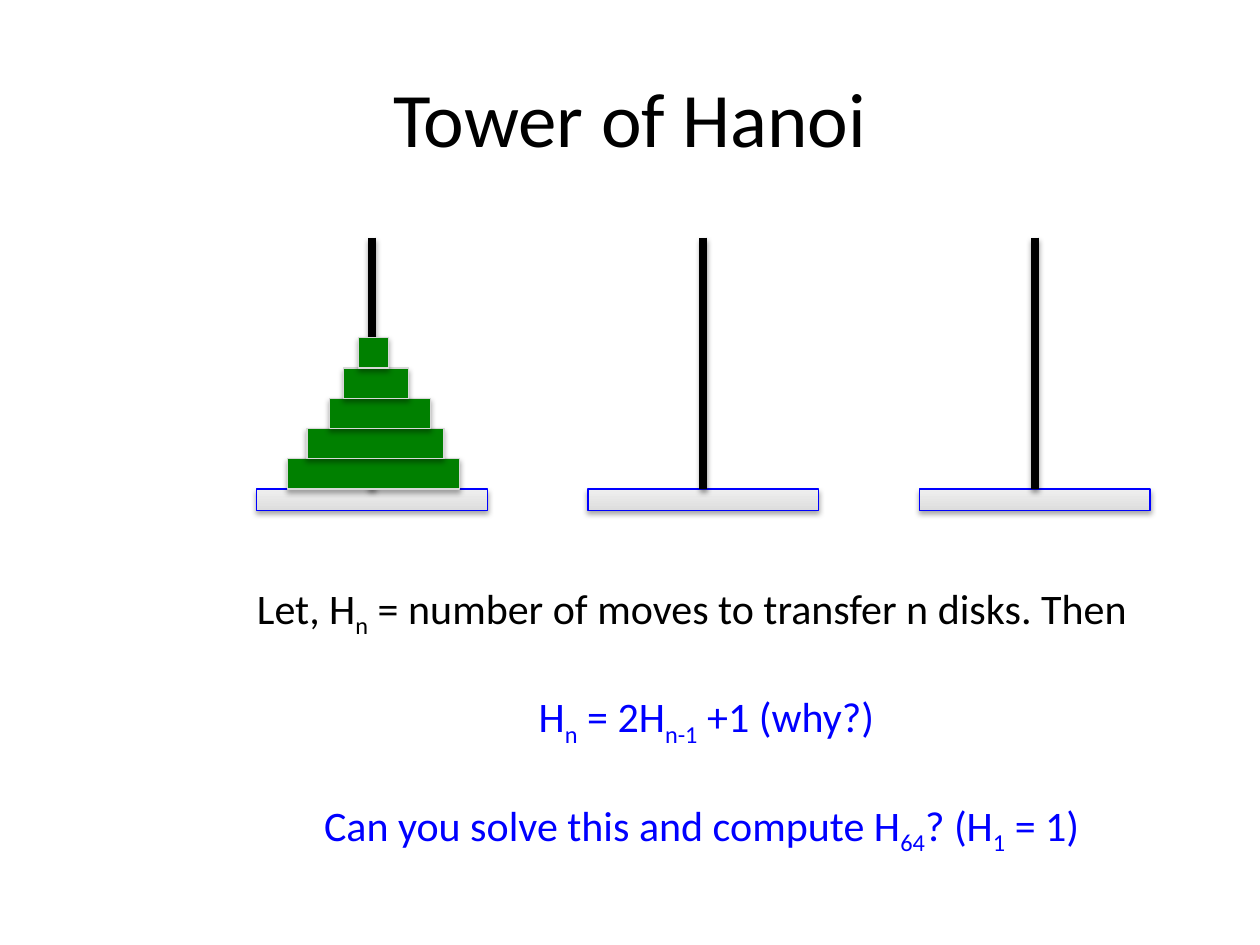
from pptx import Presentation
from pptx.dml.color import RGBColor
from pptx.enum.shapes import MSO_CONNECTOR, MSO_SHAPE
from pptx.enum.text import MSO_ANCHOR, PP_ALIGN
from pptx.oxml import parse_xml
from pptx.oxml.ns import nsdecls
from pptx.util import Cm, Pt

BLACK = RGBColor(0, 0, 0)
BLUE = RGBColor(0, 0, 255)
GREEN = RGBColor(0, 128, 0)
DISK_EDGE = RGBColor(0xD8, 0xD8, 0xD8)
BASE_DARK = RGBColor(0xDD, 0xDD, 0xDD)
BASE_LIGHT = RGBColor(0xEF, 0xEF, 0xEF)
FONT = "Calibri"

TITLE = "Tower of Hanoi"
# Each line: alignment, colour, then pieces that alternate normal and subscript
LINES = [
    (PP_ALIGN.LEFT, BLACK, ["Let, H", "n", " = number of moves to transfer n disks. Then"]),
    (PP_ALIGN.CENTER, BLUE, ["H", "n", " = 2H", "n-1", " +1 (why?)"]),
    (PP_ALIGN.CENTER, BLUE, ["Can you solve this and compute H", "64", "? (H", "1", " = 1) "]),
]

# All lengths in centimetres
PEG_COUNT, FIRST_PEG, PEG_PITCH = 3, 7.5, 6.68
PEG_TOP, BASE_TOP = 4.79, 9.86
BASE_WIDTH, BASE_HEIGHT = 4.65, 0.43
DISK_OFFSETS = [0.03, 0.07, 0.16, 0.08, 0.03]  # off the peg, bottom disk first
DISK_WIDTH, DISK_SHRINK, DISK_HEIGHT = 3.48, 0.72, 0.61


def add_shadow(part, distance, opacity):
    """Drop shadow straight down; call after fill and line are set."""
    part._element.spPr.append(parse_xml(
        f'<a:effectLst {nsdecls("a")}>'
        f'<a:outerShdw blurRad="{Pt(3.1)}" dist="{Pt(distance)}" dir="5400000" rotWithShape="0">'
        f'<a:srgbClr val="000000"><a:alpha val="{opacity * 1000}"/></a:srgbClr>'
        '</a:outerShdw></a:effectLst>'))


def add_slab(slide, center, top, width, height, edge):
    slab = slide.shapes.add_shape(
        MSO_SHAPE.RECTANGLE, Cm(center - width / 2), Cm(top), Cm(width), Cm(height))
    slab.line.color.rgb = edge
    slab.line.width = Pt(0.75)
    return slab


def add_base(slide, center):
    base = add_slab(slide, center, BASE_TOP, BASE_WIDTH, BASE_HEIGHT, BLUE)
    base.fill.gradient()
    base.fill.gradient_angle = 90
    for stop, color in zip(base.fill.gradient_stops, (BASE_DARK, BASE_LIGHT)):
        stop.color.rgb = color
    add_shadow(base, 1.8, 35)
    return base


def add_peg(slide, center, base):
    peg = slide.shapes.add_connector(
        MSO_CONNECTOR.STRAIGHT, Cm(center), Cm(PEG_TOP), Cm(center), Cm(BASE_TOP))
    peg.end_connect(base, 0)
    peg.line.color.rgb = BLACK
    peg.line.width = Pt(4.5)
    add_shadow(peg, 1.6, 38)


def add_disk(slide, level, offset):
    disk = add_slab(slide, FIRST_PEG + offset, BASE_TOP - (level + 1) * DISK_HEIGHT,
                    DISK_WIDTH - level * DISK_SHRINK, DISK_HEIGHT, DISK_EDGE)
    disk.fill.solid()
    disk.fill.fore_color.rgb = GREEN
    add_shadow(disk, 1.8, 35)


def add_text_frame(slide, left, top, width, height):
    frame = slide.shapes.add_textbox(Cm(left), Cm(top), Cm(width), Cm(height)).text_frame
    frame.word_wrap = True
    return frame


def style(paragraph, size, color, alignment):
    paragraph.font.name = FONT
    paragraph.font.size = Pt(size)
    paragraph.font.color.rgb = color
    paragraph.alignment = alignment


def main():
    deck = Presentation()
    deck.slide_width, deck.slide_height = Cm(25.4), Cm(19.05)
    slide = deck.slides.add_slide(deck.slide_layouts[6])

    title = add_text_frame(slide, 1.27, 0.76, 22.86, 3.18)
    title.vertical_anchor = MSO_ANCHOR.MIDDLE
    title.text = TITLE
    style(title.paragraphs[0], 44, BLACK, PP_ALIGN.CENTER)

    centers = [FIRST_PEG + i * PEG_PITCH for i in range(PEG_COUNT)]
    bases = [add_base(slide, center) for center in centers]
    for center, base in zip(centers, bases):
        add_peg(slide, center, base)
    for level, offset in enumerate(DISK_OFFSETS):
        add_disk(slide, level, offset)

    recurrence = add_text_frame(slide, 4.93, 11.61, 18.62, 7.44)
    for i, (alignment, color, pieces) in enumerate(LINES):
        line = recurrence.add_paragraph() if i else recurrence.paragraphs[0]
        style(line, 24, color, alignment)
        if i:
            line.space_before = Pt(29.3)
        for j, piece in enumerate(pieces):
            run = line.add_run()
            run.text = piece
            if j % 2:
                run.font._element.set("baseline", "-25000")

    deck.save("out.pptx")


if __name__ == "__main__":
    main()
